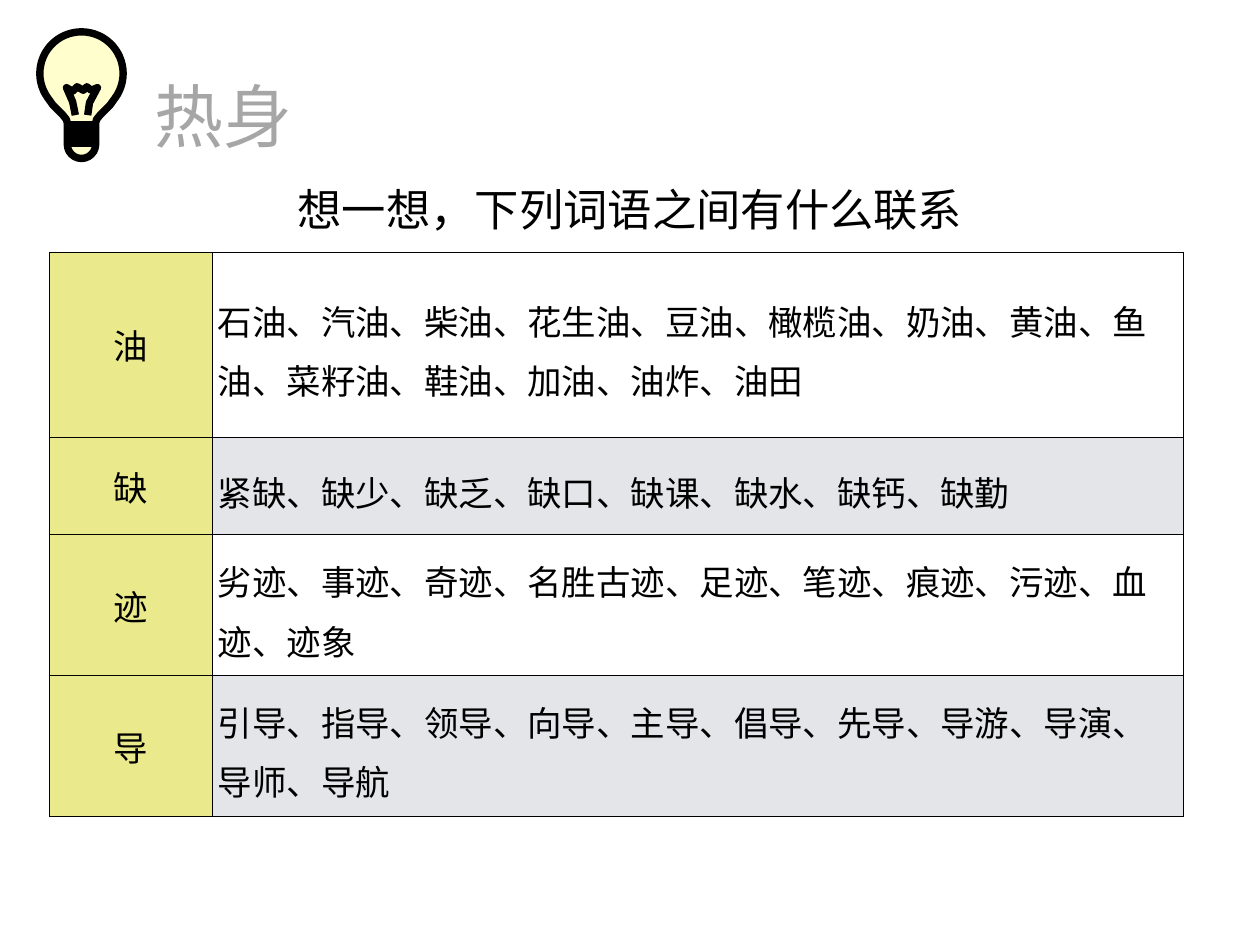
import math
from dataclasses import dataclass

import lxml.etree
import pptx
import pptx.dml.color
import pptx.enum.text
import pptx.oxml.ns
import pptx.shapes.autoshape
import pptx.slide
import pptx.table
import pptx.text.text
import pptx.util

Inches = pptx.util.Inches
Align = pptx.enum.text.PP_ALIGN
Anchor = pptx.enum.text.MSO_ANCHOR
Point = tuple[float, float]

COLORS = {
    "black": "000000", "title": "A6A6A6", "bulb": "FFFECC",
    "key": "EAEA8C", "plain": "FFFFFF", "band": "E3E5E8",
}
SANS = "Noto Sans CJK SC"


@dataclass
class Row:
    key: str
    words: str
    height: float


ROWS = [
    Row("油", "石油、汽油、柴油、花生油、豆油、橄榄油、奶油、黄油、鱼油、菜籽油、鞋油、加油、油炸、油田", 2.09),
    Row("缺", "紧缺、缺少、缺乏、缺口、缺课、缺水、缺钙、缺勤", 1.1),
    Row("迹", "劣迹、事迹、奇迹、名胜古迹、足迹、笔迹、痕迹、污迹、血迹、迹象", 1.59),
    Row("导", "引导、指导、领导、向导、主导、倡导、先导、导游、导演、导师、导航", 1.59),
]


def color(name: str) -> pptx.dml.color.RGBColor:
    return pptx.dml.color.RGBColor.from_string(COLORS[name])


def write(host: pptx.text.text.TextFrame | pptx.table._Cell, text: str, *,
          font: str, size: float, ink: str = "black", align: Align = Align.LEFT,
          anchor: Anchor = Anchor.MIDDLE, pad: float = 0.07,
          space: float | None = None) -> None:
    """Fill a text frame or a table cell with one paragraph."""
    host.margin_left = host.margin_right = Inches(pad)
    host.margin_top = host.margin_bottom = Inches(pad)
    host.vertical_anchor = anchor
    frame = getattr(host, "text_frame", host)
    para = frame.paragraphs[0]
    para.alignment = align
    para.line_spacing = space
    run = para.add_run()
    run.text = text
    run.font.name = font
    run.font.size = pptx.util.Pt(size)
    run.font.color.rgb = color(ink)
    east = lxml.etree.SubElement(run.font._element, pptx.oxml.ns.qn("a:ea"))
    east.set("typeface", font)


def arc(mid: Point, radius: float, start: int, end: int, step: int) -> list[Point]:
    """Points along a circle, clockwise from the right, in degrees."""
    return [(mid[0] + radius * math.cos(math.radians(turn)),
             mid[1] + radius * math.sin(math.radians(turn)))
            for turn in range(start, end + 1, step)]


def trace(slide: pptx.slide.Slide, paths: list[list[Point]],
          close: bool) -> pptx.shapes.autoshape.Shape:
    """Draw paths as one outline with a thick black line."""
    pen = None
    for path in paths:
        first, *rest = [(Inches(x), Inches(y)) for x, y in path]
        if pen is None:
            pen = slide.shapes.build_freeform(*first)
        else:
            pen.move_to(*first)
        pen.add_line_segments(rest, close=close)
    shape = pen.convert_to_shape()
    shape.shadow.inherit = False
    shape.line.color.rgb = color("black")
    shape.line.width = pptx.util.Pt(6)
    return shape


def draw_bulb(slide: pptx.slide.Slide) -> None:
    axis = 0.92
    neck = [(1.24, 1.19), (1.13, 1.3), (1.09, 1.35), (1.08, 1.39)]
    left = [(2 * axis - x, y) for x, y in reversed(neck)]
    glass = arc((axis, 0.83), 0.47, 144, 396, 6)
    foot = arc((axis, 1.63), 0.16, 0, 180, 15)
    shape = trace(slide, [glass + neck + foot + left], True)
    shape.fill.solid()
    shape.fill.fore_color.rgb = color("bulb")

    wire = [(0.85, 1.3), (0.82, 1.15), (0.75, 0.99), (0.82, 1.03), (0.87, 0.98),
            (0.94, 1.02), (0.98, 0.98), (1.03, 1.02), (1.1, 0.99),
            (1.01, 1.16), (0.99, 1.3)]
    screw = [(x, 1.41 + 0.07 * turn) for turn in range(4)
             for x in ((0.76, 1.08) if turn % 2 == 0 else (1.08, 0.76))]
    trace(slide, [wire, screw], False).fill.background()


def paint(cell: pptx.table._Cell, fill: str) -> None:
    """Give a cell thin black borders and a fill."""
    props = cell._tc.get_or_add_tcPr()
    qn = pptx.oxml.ns.qn
    for side in "LRTB":
        edge = lxml.etree.SubElement(props, qn(f"a:ln{side}"),
                                     w=str(pptx.util.Pt(0.96)))
        solid = lxml.etree.SubElement(edge, qn("a:solidFill"))
        lxml.etree.SubElement(solid, qn("a:srgbClr"), val=COLORS["black"])
    cell.fill.solid()
    cell.fill.fore_color.rgb = color(fill)


def draw_table(slide: pptx.slide.Slide) -> None:
    table = slide.shapes.add_table(
        len(ROWS), 2, Inches(0.56), Inches(2.85), Inches(12.8),
        Inches(sum(row.height for row in ROWS))).table
    table.first_row = table.horz_banding = False
    for column, width in zip(table.columns, (1.84, 10.96)):
        column.width = Inches(width)
    for index, row in enumerate(ROWS):
        table.rows[index].height = Inches(row.height)
        key, words = table.cell(index, 0), table.cell(index, 1)
        paint(key, "key")
        paint(words, "band" if index % 2 else "plain")
        write(key, row.key, font=SANS, size=28, align=Align.CENTER, pad=0.06)
        write(words, row.words, font=SANS, size=28, pad=0.06, space=1.2)


def main() -> None:
    deck = pptx.Presentation()
    deck.slide_width, deck.slide_height = Inches(14.22), Inches(10.67)
    slide = deck.slides.add_slide(deck.slide_layouts[5])

    title = slide.shapes.title
    title.left, title.top = Inches(1.67), Inches(0.76)
    title.width, title.height = Inches(12.55), Inches(1.23)
    title.text_frame.word_wrap = True
    title.text_frame.auto_size = pptx.enum.text.MSO_AUTO_SIZE.NONE
    write(title.text_frame, "热身", font="Arial", size=56, ink="title",
          anchor=Anchor.TOP)

    draw_bulb(slide)

    prompt = slide.shapes.add_textbox(
        Inches(0.01), Inches(1.94), Inches(14.2), Inches(0.84)).text_frame
    prompt.word_wrap = True
    write(prompt, "想一想，下列词语之间有什么联系", font="Calibri", size=36,
          align=Align.CENTER)

    draw_table(slide)
    deck.save("out.pptx")


if __name__ == "__main__":
    main()
